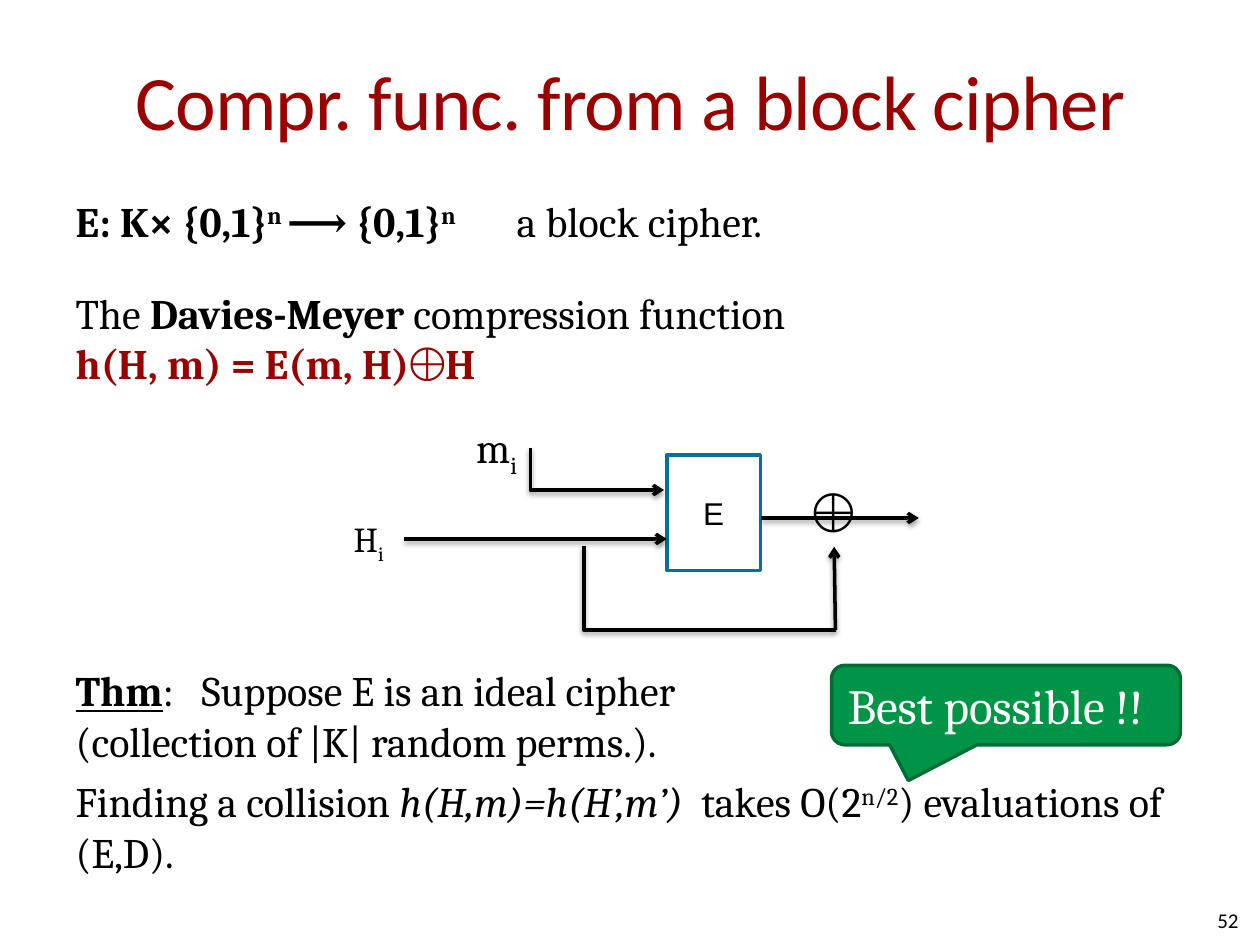
from lxml import etree
from pptx import Presentation
from pptx import util as u
from pptx.dml.color import RGBColor
from pptx.enum import shapes, text
from pptx.oxml.ns import qn

COLORS = {
    "black": "000000", "white": "FFFFFF", "red": "990000",
    "blue": "00709E", "green": "009446", "dark_green": "006D34",
}
SERIF = "Cambria"
LINE_WIDTH = 2


def color(name):
    return RGBColor.from_string(COLORS[name])


def add_xml(parent, tag, **attributes):
    return etree.SubElement(parent, qn(tag), attributes)


class SlideBuilder:
    """Holds the text style, the slide and the shape tree being filled."""

    def __init__(self, slide):
        self.slide = slide
        self.shapes = slide.shapes

    def start_group(self):
        self.shapes = self.slide.shapes.add_group_shape().shapes

    def end_group(self):
        self.shapes = self.slide.shapes

    def place(self, shape, left, top, width, height):
        shape.left, shape.top = u.Pt(left), u.Pt(top)
        shape.width, shape.height = u.Pt(width), u.Pt(height)

    def frame(self, shape, wrap=True, anchor=text.MSO_ANCHOR.TOP, insets=(7.2, 3.6)):
        frame = shape.text_frame
        frame.word_wrap = wrap
        frame.auto_size = text.MSO_AUTO_SIZE.NONE
        frame.vertical_anchor = anchor
        frame.margin_left = frame.margin_right = u.Pt(insets[0])
        frame.margin_top = frame.margin_bottom = u.Pt(insets[1])
        return frame

    def run(self, paragraph, words, size, font=SERIF, fill="black", bold=False,
            italic=False, underline=False, baseline=0, spacing=0):
        run = paragraph.add_run()
        run.text = words
        run.font.name, run.font.size = font, u.Pt(size)
        run.font.bold, run.font.italic, run.font.underline = bold, italic, underline
        run.font.color.rgb = color(fill)
        properties = run._r.get_or_add_rPr()
        if baseline:
            properties.set("baseline", str(baseline * 1000))
        if spacing:
            properties.set("spc", str(round(spacing * 100)))

    def title(self, words, box):
        shape = self.slide.shapes.title
        self.place(shape, *box)
        frame = self.frame(shape, anchor=text.MSO_ANCHOR.MIDDLE, insets=(0, 3.6))
        frame.paragraphs[0].alignment = text.PP_ALIGN.CENTER
        self.run(frame.paragraphs[0], words, 44, "Calibri", "red", spacing=-0.5)

    def body(self, paragraphs, box):
        """Each paragraph is (space before, tab stop, runs); None breaks the line."""
        shape = self.slide.placeholders[1]
        self.place(shape, *box)
        frame = self.frame(shape)
        for index, (before, tab, runs) in enumerate(paragraphs):
            paragraph = frame.add_paragraph() if index else frame.paragraphs[0]
            properties = paragraph._p.get_or_add_pPr()
            properties.set("marL", "0")
            properties.set("indent", "0")
            add_xml(properties, "a:buNone")
            if tab:
                tabs = add_xml(properties, "a:tabLst")
                add_xml(tabs, "a:tab", pos=str(u.Pt(tab)), algn="l")
            paragraph.space_before = u.Pt(before)
            for item in runs:
                if item is None:
                    paragraph.add_line_break()
                else:
                    words, style = item
                    self.run(paragraph, words, 24, **style)

    def label(self, words, size, box, subscript="", font=SERIF, wrap=False,
              align=text.PP_ALIGN.LEFT, **frame_style):
        shape = self.shapes.add_textbox(*map(u.Pt, box))
        paragraph = self.frame(shape, wrap, **frame_style).paragraphs[0]
        paragraph.alignment = align
        self.run(paragraph, words, size, font)
        if subscript:
            self.run(paragraph, subscript, size, font, baseline=-25)
        return shape

    def block(self, kind, words, box, inside, outline, align, anchor, **run_style):
        shape = self.shapes.add_shape(kind, *map(u.Pt, box))
        shape.shadow.inherit = False
        shape.fill.solid()
        shape.fill.fore_color.rgb = color(inside)
        shape.line.color.rgb = color(outline)
        shape.line.width = u.Pt(LINE_WIDTH)
        paragraph = self.frame(shape, anchor=anchor).paragraphs[0]
        paragraph.alignment = align
        self.run(paragraph, words, **run_style)
        return shape

    def wire(self, start, end, arrow=True, kind=shapes.MSO_CONNECTOR.STRAIGHT):
        wire = self.shapes.add_connector(kind, *map(u.Pt, start + end))
        wire.line.color.rgb = color("black")
        wire.line.width = u.Pt(LINE_WIDTH)
        if arrow:
            add_xml(wire.line._get_or_add_ln(), "a:tailEnd", type="arrow")
        effects = add_xml(wire._element.spPr, "a:effectLst")
        shadow = add_xml(effects, "a:outerShdw", blurRad=str(u.Pt(3.1)),
                         dist=str(u.Pt(1.6)), dir="5400000", rotWithShape="0")
        shade = add_xml(shadow, "a:srgbClr", val=COLORS["black"])
        add_xml(shade, "a:alpha", val="38000")
        return wire

    def corner_wire(self, start, end, arrow):
        """Runs down from the start, then right to the end."""
        (left, top), (right, bottom) = start, end
        middle_x, middle_y = (left + right) / 2, (top + bottom) / 2
        half_width, half_height = (bottom - top) / 2, (right - left) / 2
        wire = self.wire((middle_x + half_width, middle_y - half_height),
                         (middle_x - half_width, middle_y + half_height),
                         arrow, shapes.MSO_CONNECTOR.ELBOW)
        properties = wire._element.spPr
        properties.find(qn("a:prstGeom")).set("prst", "bentConnector2")
        properties.find(qn("a:xfrm")).set("rot", "16200000")


def main():
    presentation = Presentation()
    presentation.slide_width, presentation.slide_height = u.Pt(720), u.Pt(540)
    builder = SlideBuilder(presentation.slides.add_slide(presentation.slide_layouts[1]))

    bold, raised = {"bold": True}, {"bold": True, "baseline": 30}
    builder.title("Compr. func. from a block cipher", (36, 12.24, 648, 90))
    builder.body([
        (0, 246, [("E: K× {0,1}", bold), ("n ", raised), ("⟶ {0,1}", bold),
                  ("n", raised), ("\ta block cipher.", {})]),
        (23.8, None, [("The ", {}), ("Davies-Meyer ", bold),
                      ("compression function", {}), None,
                      ("h(H, m) = E(m, H)⨁H", {"bold": True, "fill": "red"})]),
        (158, 71.7, [("Thm", {"bold": True, "underline": True}),
                     (":\tSuppose E is an ideal cipher", {}), None,
                     ("(collection of |K| random perms.).", {})]),
        (5.8, None, [("Finding a collision ", {}),
                     ("h(H,m)=h(H’,m’)  ", {"italic": True}), ("takes O(2", {}),
                     ("n/2", {"baseline": 30}), (") evaluations of (E,D).", {})]),
    ], (36, 108, 648, 374.4))

    builder.start_group()
    builder.block(shapes.MSO_SHAPE.RECTANGLE, "E", (381, 260, 53.5, 66), "white", "blue",
                  text.PP_ALIGN.CENTER, text.MSO_ANCHOR.MIDDLE, size=18, font="Arial")
    builder.label("m", 24, (265, 237.6, 39, 36), "i")
    builder.corner_wire((303, 256), (379.4, 280), arrow=True)
    builder.wire((231, 308), (381, 308))
    builder.label("H", 20, (195, 292.3, 32.4, 31.7), "i")
    builder.wire((435, 296), (525, 296))
    xor = builder.label("⨁", 28, (457.2, 271.4, 39, 41))
    builder.corner_wire((333.7, 311.8), (477.4, 360), arrow=False)
    builder.wire((477.4, 360), (476.7, 312.4)).end_connect(xor, 2)
    builder.end_group()

    callout = builder.block(
        shapes.MSO_SHAPE.ROUNDED_RECTANGULAR_CALLOUT, "Best possible !!",
        (475.2, 380.2, 199.4, 45.4), "green", "dark_green",
        text.PP_ALIGN.LEFT, text.MSO_ANCHOR.TOP, size=28, fill="white")
    callout.adjustments[0], callout.adjustments[1] = -0.28, 0.95
    builder.label("52", 12, (540, 511.2, 167.8, 28.8), font="Calibri", wrap=True,
                  align=text.PP_ALIGN.RIGHT, anchor=text.MSO_ANCHOR.MIDDLE, insets=(0, 0))
    presentation.save("out.pptx")


if __name__ == "__main__":
    main()
